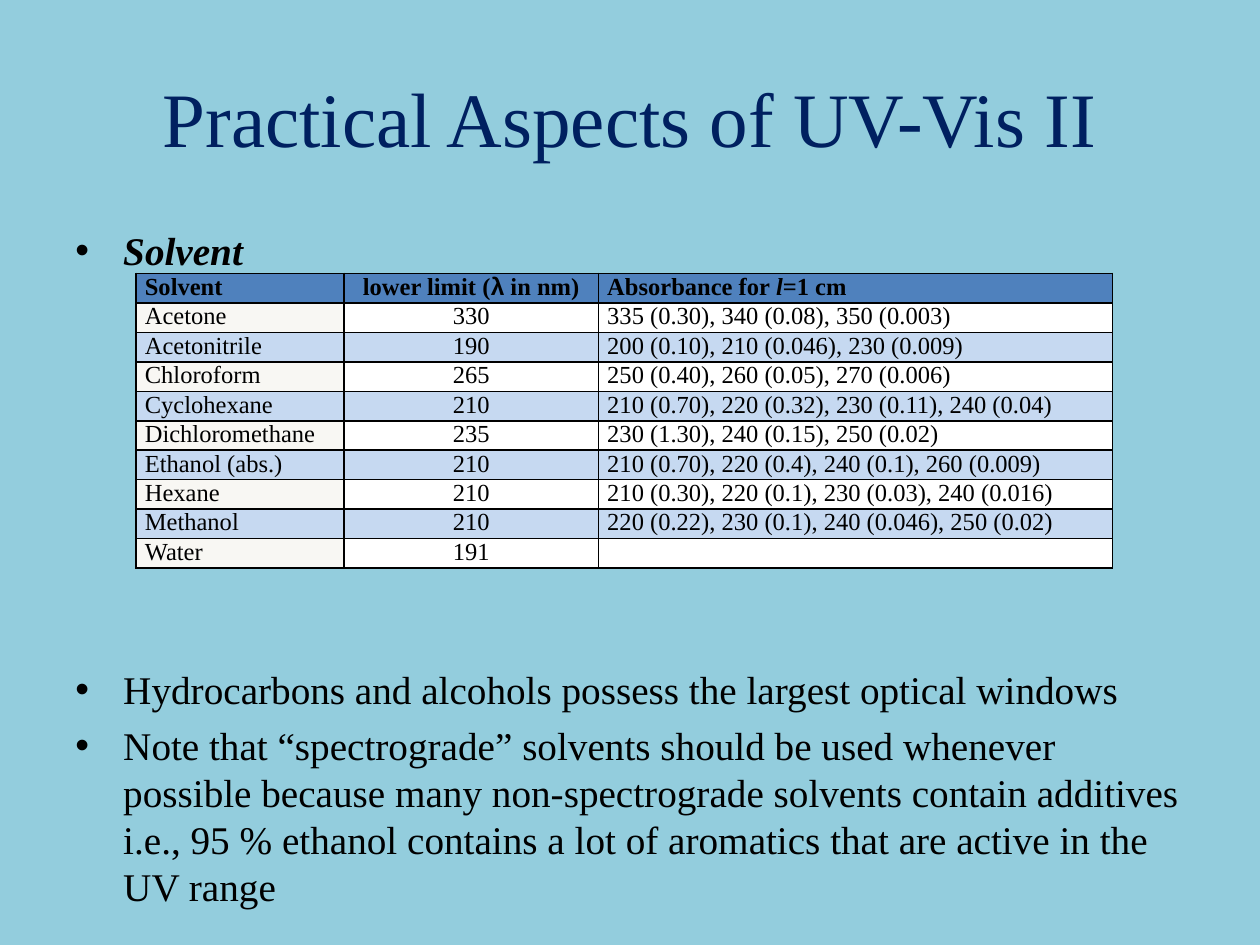
from lxml.etree import SubElement
from pptx import Presentation
from pptx.dml.color import RGBColor
from pptx.enum.text import MSO_ANCHOR, PP_ALIGN
from pptx.oxml.ns import qn
from pptx.util import Inches, Pt

SERIF = "Times New Roman"
HEAD = [
    [("Solvent", "")],
    [("lower limit (", ""), ("λ", "Arial"), (" in nm)", "")],
    [("Absorbance for ", ""), ("l", "italic"), ("=1 cm", "")],
]
ROWS = [
    ("Acetone", "330", "335 (0.30), 340 (0.08), 350 (0.003)"),
    ("Acetonitrile", "190", "200 (0.10), 210 (0.046), 230 (0.009)"),
    ("Chloroform", "265", "250 (0.40), 260 (0.05), 270 (0.006)"),
    ("Cyclohexane", "210", "210 (0.70), 220 (0.32), 230 (0.11), 240 (0.04)"),
    ("Dichloromethane", "235", "230 (1.30), 240 (0.15), 250 (0.02)"),
    ("Ethanol (abs.)", "210", "210 (0.70), 220 (0.4), 240 (0.1), 260 (0.009)"),
    ("Hexane", "210", "210 (0.30), 220 (0.1), 230 (0.03), 240 (0.016)"),
    ("Methanol", "210", "220 (0.22), 230 (0.1), 240 (0.046), 250 (0.02)"),
    ("Water", "191", ""),
]
# Text and the points of space before it; the table sits in the large gap.
POINTS = [
    ("Solvent", 0),
    ("Hydrocarbons and alcohols possess the largest optical windows", 224),
    ("Note that “spectrograde” solvents should be used whenever possible "
     "because many non-spectrograde solvents contain additives i.e., 95 % "
     "ethanol contains a lot of aromatics that are active in the UV range", 4.8),
]


def paint(target, color):
    target.solid()
    target.fore_color.rgb = RGBColor.from_string(color)


def style(run, size, color="000000", bold=False, italic=False, face=SERIF):
    font = run.font
    font.size, font.name, font.bold, font.italic = Pt(size), face, bold, italic
    paint(font.fill, color)


def add_box(slide, box):
    frame = slide.shapes.add_textbox(*map(Inches, box)).text_frame
    frame.word_wrap = True
    return frame


def add_title(slide, box):
    frame = add_box(slide, box)
    frame.vertical_anchor = MSO_ANCHOR.MIDDLE
    frame.text = "Practical Aspects of UV-Vis II"
    para = frame.paragraphs[0]
    para.alignment = PP_ALIGN.CENTER
    style(para.runs[0], 44, "002060")


def set_bullet(para):
    props = para._p.get_or_add_pPr()
    indent = Inches(0.38)
    props.set("marL", str(indent))
    props.set("indent", str(-indent))
    SubElement(props, qn("a:buFont"), typeface="Arial")
    SubElement(props, qn("a:buChar"), char="•")


def add_points(slide, box):
    frame = add_box(slide, box)
    for i, (text, gap) in enumerate(POINTS):
        para = frame.add_paragraph() if i else frame.paragraphs[0]
        para.text = text
        para.space_before = Pt(gap)
        para.line_spacing = Pt(26.86)
        set_bullet(para)
        style(para.runs[0], 22.4, bold=i == 0, italic=i == 0)


def set_border(cell):
    props = cell._tc.get_or_add_tcPr()
    for i, side in enumerate(("lnL", "lnR", "lnT", "lnB")):
        line = props.makeelement(qn("a:" + side), {"w": str(Pt(1))})
        props.insert(i, line)
        fill = SubElement(line, qn("a:solidFill"))
        SubElement(fill, qn("a:srgbClr"), val="000000")


def fill_cell(cell, parts, color, centred, bold):
    cell.margin_left = cell.margin_right = Inches(0.07)
    cell.margin_top = cell.margin_bottom = 0
    paint(cell.fill, color)
    set_border(cell)
    para = cell.text_frame.paragraphs[0]
    if centred:
        para.alignment = PP_ALIGN.CENTER
    for text, mark in parts:
        run = para.add_run()
        run.text = text
        style(run, 14, bold=bold, italic=mark == "italic",
              face="Arial" if mark == "Arial" else SERIF)
    if not parts:
        # An empty cell needs a small font so that its row stays low.
        para._p.get_or_add_endParaRPr().set("sz", "1400")


def add_solvents(slide, box):
    rows = [HEAD] + [[[(text, "")] if text else [] for text in row]
                     for row in ROWS]
    table = slide.shapes.add_table(len(rows), 3, *map(Inches, box)).table
    for col, width in zip(table.columns, (1.65, 2.02, 4.08)):
        col.width = Inches(width)
    for r, row in enumerate(rows):
        table.rows[r].height = Inches(box[3] / len(rows))
        for c, parts in enumerate(row):
            if r == 0:
                color = "4F81BD"
            elif r % 2 == 0:
                color = "C6D9F1"
            else:
                color = "FFFFFF" if c else "F8F7F3"
            fill_cell(table.cell(r, c), parts, color, c == 1, r == 0)


def main():
    deck = Presentation()
    deck.slide_width, deck.slide_height = Inches(10), Inches(7.5)
    slide = deck.slides.add_slide(deck.slide_layouts[6])
    paint(slide.background.fill, "93CDDD")
    add_title(slide, (0.5, 0.3, 9, 1.25))
    add_points(slide, (0.5, 1.75, 9, 4.95))
    add_solvents(slide, (1.08, 2.17, 7.75, 2.15))
    deck.save("out.pptx")


if __name__ == "__main__":
    main()
